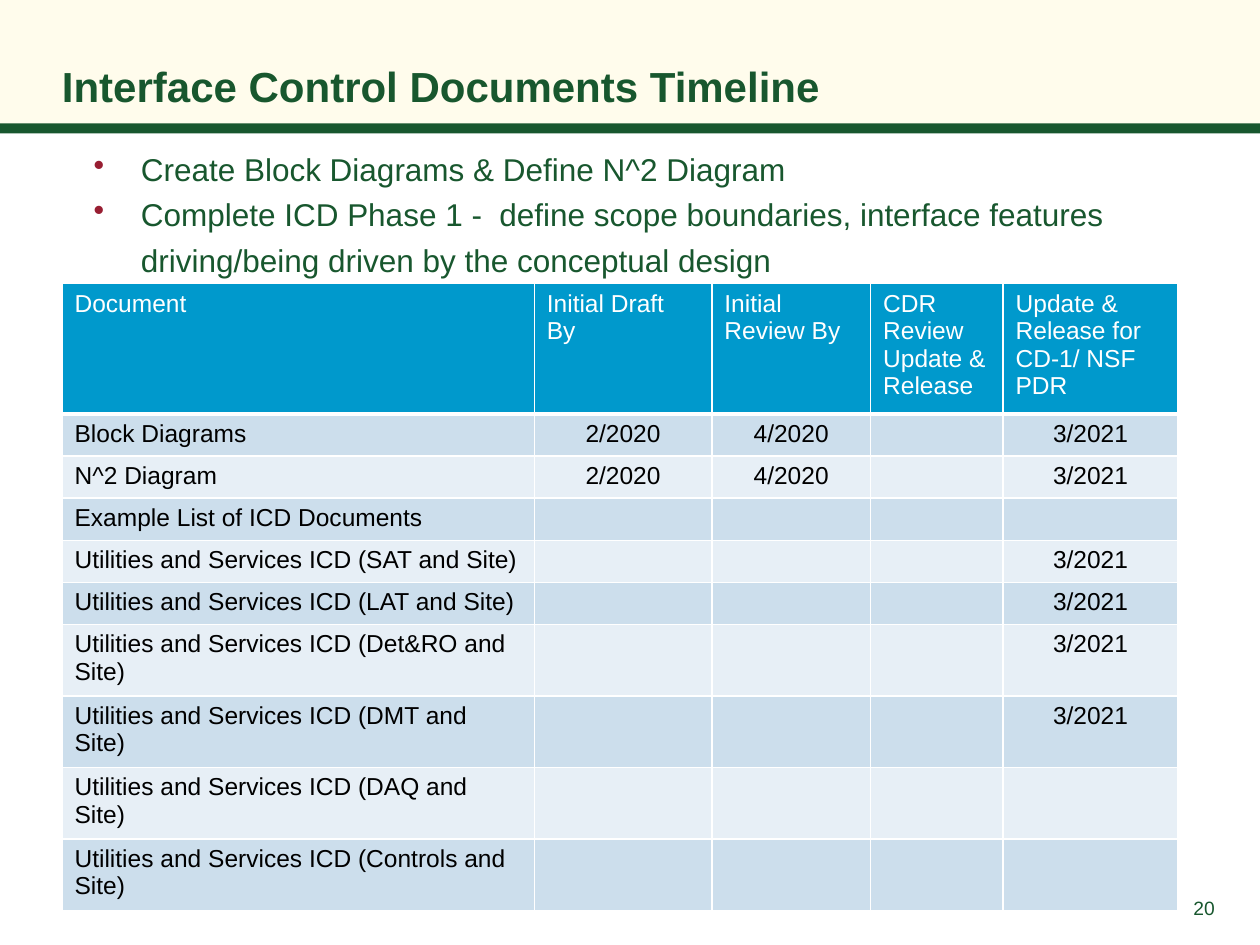
from lxml import etree
from pptx import Presentation
from pptx import util as u
from pptx.dml.color import RGBColor
from pptx.enum import shapes, text
from pptx.oxml import ns

COLORS = {
    "cream": "FFFCEC",
    "green": "18572E",
    "crimson": "981E32",
    "header": "0099CC",
    "band_dark": "CCDEEC",
    "band_light": "E7EFF6",
    "white": "FFFFFF",
    "black": "000000",
}
FONT = "Arial"
LEFT, CENTER, RIGHT = text.PP_ALIGN.LEFT, text.PP_ALIGN.CENTER, text.PP_ALIGN.RIGHT
TOP, MIDDLE, BOTTOM = (text.MSO_ANCHOR.TOP, text.MSO_ANCHOR.MIDDLE,
                       text.MSO_ANCHOR.BOTTOM)

BULLETS = [
    "Create Block Diagrams & Define N^2 Diagram",
    "Complete ICD Phase 1 -  define scope boundaries, interface features "
    "driving/being driven by the conceptual design",
]
COLUMN_WIDTHS = [9.52, 3.58, 3.2, 2.67, 3.53]
HEADINGS = ["Document", "Initial Draft By", "Initial Review By",
            "CDR Review Update & Release", "Update & Release for CD-1/ NSF PDR"]
DRAFT, REVIEW, RELEASE = "2/2020", "4/2020", "3/2021"
UTILITIES = "Utilities and Services ICD ({} and Site)"
DOCUMENTS = [
    ["Block Diagrams", DRAFT, REVIEW, "", RELEASE],
    ["N^2 Diagram", DRAFT, REVIEW, "", RELEASE],
    ["Example List of ICD Documents", "", "", "", ""],
    *([UTILITIES.format(name), "", "", "", RELEASE]
      for name in ("SAT", "LAT", "Det&RO", "DMT")),
    *([UTILITIES.format(name), "", "", "", ""] for name in ("DAQ", "Controls")),
]


def color(name):
    return RGBColor.from_string(COLORS[name])


def add_color_fill(parent, tag, name):
    holder = etree.SubElement(parent, ns.qn(tag))
    etree.SubElement(holder, ns.qn("a:srgbClr"), val=COLORS[name])


class SlideBuilder:
    def __init__(self, slide):
        self.slide = slide

    def style(self, paragraph, size, color_name, align=LEFT, bold=False):
        paragraph.alignment = align
        font = paragraph.font
        font.name, font.size, font.bold = FONT, u.Pt(size), bold
        font.color.rgb = color(color_name)

    def bar(self, top, height, color_name):
        """Add a plain band across the full slide width."""
        shape = self.slide.shapes.add_shape(
            shapes.MSO_SHAPE.RECTANGLE, 0, u.Cm(top), u.Cm(25.4), u.Cm(height))
        shape.shadow.inherit = False
        shape.fill.solid()
        shape.fill.fore_color.rgb = color(color_name)
        shape.line.fill.background()

    def text_box(self, box, lines, size, anchor=TOP, **style):
        shape = self.slide.shapes.add_textbox(*map(u.Cm, box))
        frame = shape.text_frame
        frame.word_wrap = True
        frame.vertical_anchor = anchor
        frame.margin_left = frame.margin_right = 0
        frame.margin_top = frame.margin_bottom = 0
        frame.text = "\n".join(lines)
        for paragraph in frame.paragraphs:
            self.style(paragraph, size, "green", **style)
        return frame

    def bullets(self, box, lines, size):
        for paragraph in self.text_box(box, lines, size).paragraphs:
            paragraph.line_spacing = 1.2
            properties = paragraph._p.get_or_add_pPr()
            properties.set("marL", str(u.Cm(1.57)))
            properties.set("indent", str(u.Cm(-0.95)))
            bullet = etree.Element(ns.qn("a:buChar"), char="•")
            defaults = properties.find(ns.qn("a:defRPr"))
            defaults.addprevious(bullet)
            add_color_fill(properties, "a:buClr", "crimson")
            bullet.addprevious(properties[-1])

    def borders(self, cell, bottom):
        """Draw white cell edges; bottom is the width of the lower one."""
        properties = cell._tc.get_or_add_tcPr()
        for side, width in (("L", 1), ("R", 1), ("T", 1), ("B", bottom)):
            line = etree.SubElement(properties, ns.qn(f"a:ln{side}"),
                                    w=str(u.Pt(width)))
            add_color_fill(line, "a:solidFill", "white")

    def cell(self, cell, content, fill, color_name, align, bottom=1):
        self.borders(cell, bottom)
        cell.fill.solid()
        cell.fill.fore_color.rgb = color(fill)
        cell.text = content
        paragraph = cell.text_frame.paragraphs[0]
        self.style(paragraph, 14, color_name, align)
        if not content:
            etree.SubElement(paragraph._p, ns.qn("a:endParaRPr"), sz="1400")

    def table(self, left, top, widths, headings, rows):
        header_height, row_height = 1.85, 0.76
        table = self.slide.shapes.add_table(
            len(rows) + 1, len(widths), u.Cm(left), u.Cm(top), u.Cm(sum(widths)),
            u.Cm(header_height + row_height * len(rows))).table
        table.first_row = table.horz_banding = False
        for column, width in zip(table.columns, widths):
            column.width = u.Cm(width)
        for index, row in enumerate(table.rows):
            row.height = u.Cm(row_height if index else header_height)
        for column, heading in enumerate(headings):
            self.cell(table.cell(0, column), heading, "header", "white", LEFT, 3)
        for index, row in enumerate(rows, start=1):
            fill = "band_dark" if index % 2 else "band_light"
            for column, content in enumerate(row):
                self.cell(table.cell(index, column), content, fill, "black",
                          CENTER if column else LEFT)


def main():
    presentation = Presentation()
    presentation.slide_width, presentation.slide_height = u.Cm(25.4), u.Cm(19.05)
    builder = SlideBuilder(presentation.slides.add_slide(presentation.slide_layouts[6]))
    builder.bar(0, 2.59, "cream")
    builder.bar(2.49, 0.2, "green")
    builder.text_box((23.8, 17.55, 0.69, 1.5), ["20"], 11, MIDDLE, align=RIGHT)
    builder.text_box((1.25, 0.15, 22.5, 2.08),
                     ["Interface Control Documents Timeline"], 24, BOTTOM, bold=True)
    builder.bullets((1.27, 2.87, 22.53, 2.82), BULLETS, 18)
    builder.table(1.25, 5.72, COLUMN_WIDTHS, HEADINGS, DOCUMENTS)
    presentation.save("out.pptx")


if __name__ == "__main__":
    main()
